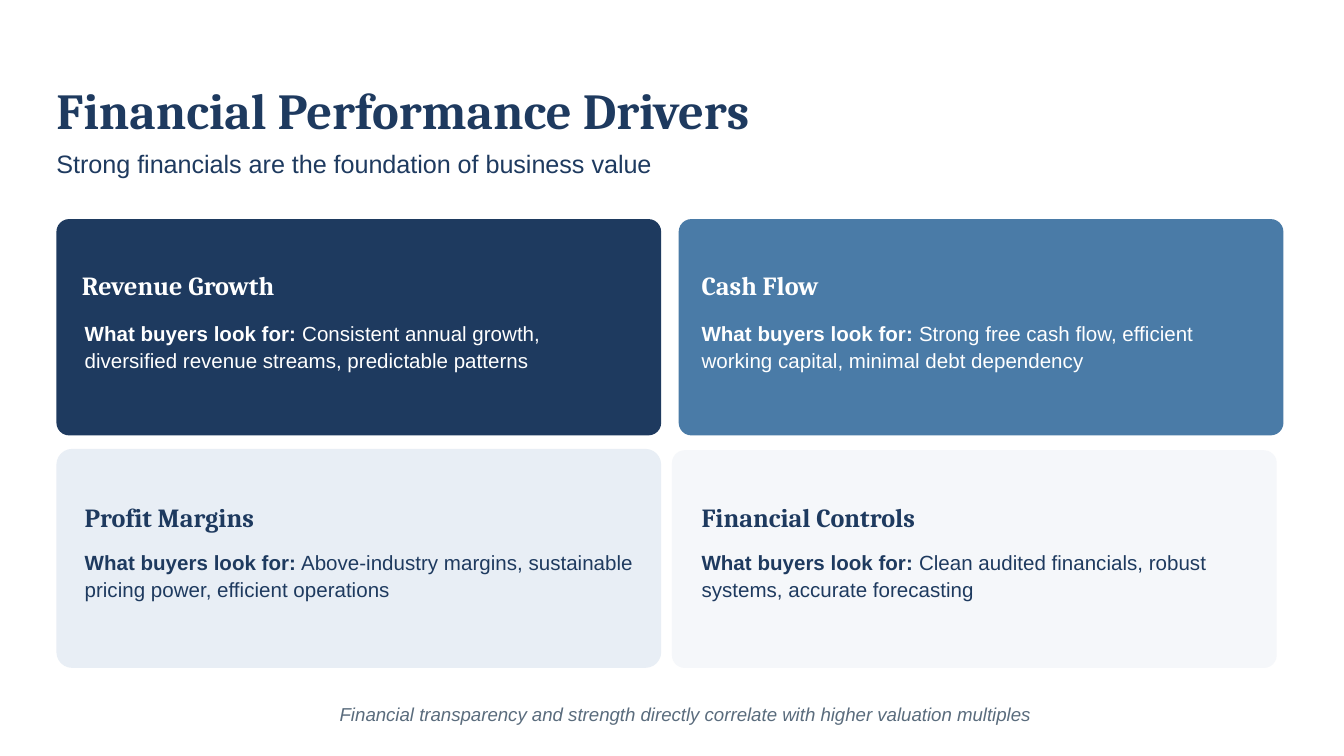
from dataclasses import dataclass

from pptx import Presentation
from pptx.dml.color import RGBColor
from pptx.enum.shapes import MSO_SHAPE
from pptx.enum.text import PP_ALIGN
from pptx.util import Inches, Pt


@dataclass(frozen=True)
class Theme:
    navy: str = "1E3A5F"
    blue: str = "4A7BA7"
    pale: str = "E8EEF5"
    mist: str = "F5F7FA"
    white: str = "FFFFFF"
    grey: str = "5A6C7D"
    heading_font: str = "Cambria"
    body_font: str = "Arial"
    title_size: float = 27
    subtitle_size: float = 13.5
    card_title_size: float = 14
    card_body_size: float = 11
    footer_size: float = 10


THEME = Theme()
LEFT, FULL_W = 0.42, 9.35
CARD_W = 4.5
LEAD = "What buyers look for:"

# Card box, corner, fill, text colour, text width, title left, body left, title, body
CARDS = [
    ((LEFT, 1.63, CARD_W, 1.61), 0.059, THEME.navy, THEME.white, 4.09, 0.61, 0.63,
     "Revenue Growth",
     "Consistent annual growth, diversified revenue streams, predictable patterns"),
    ((LEFT, 3.34, CARD_W, 1.63), 0.072, THEME.pale, THEME.navy, 4.09, 0.63, 0.63,
     "Profit Margins",
     "Above-industry margins, sustainable pricing power, efficient operations"),
    ((5.05, 1.63, CARD_W, 1.61), 0.059, THEME.blue, THEME.white, 4.13, 5.22, 5.22,
     "Cash Flow",
     "Strong free cash flow, efficient working capital, minimal debt dependency"),
    ((5, 3.35, CARD_W, 1.62), 0.059, THEME.mist, THEME.navy, 4.13, 5.22, 5.22,
     "Financial Controls",
     "Clean audited financials, robust systems, accurate forecasting"),
]
# Title and body tops for the upper and lower rows
ROW_TOPS = [(2.05, 2.37), (3.78, 4.07)]


def add_text(s, box, runs, font, size, color, spacing, after=0, italic=False,
             align=PP_ALIGN.LEFT):
    """Add a one-paragraph text box; runs are (text, bold) pairs."""
    tf = s.shapes.add_textbox(*map(Inches, box)).text_frame
    tf.word_wrap = True
    tf.margin_left = tf.margin_right = tf.margin_top = tf.margin_bottom = 0
    p = tf.paragraphs[0]
    p.alignment = align
    p.line_spacing = Pt(spacing)
    p.space_after = Pt(after)
    for text, bold in runs:
        r = p.add_run()
        r.text = text
        r.font.name = font
        r.font.size = Pt(size)
        r.font.bold = bold
        r.font.italic = italic
        r.font.color.rgb = RGBColor.from_string(color)


def add_panel(s, box, corner, fill):
    sp = s.shapes.add_shape(MSO_SHAPE.ROUNDED_RECTANGLE, *map(Inches, box))
    sp.adjustments[0] = corner
    sp.shadow.inherit = False
    sp.fill.solid()
    sp.fill.fore_color.rgb = RGBColor.from_string(fill)
    sp.line.fill.background()


def add_card(s, card, tops):
    box, corner, fill, color, width, title_x, body_x, title, body = card
    title_y, body_y = tops
    add_panel(s, box, corner, fill)
    add_text(s, (title_x, title_y, width, 0.19), [(title, True)],
             THEME.heading_font, THEME.card_title_size, color, 13.5, after=4.5)
    add_text(s, (body_x, body_y, width, 0.41), [(LEAD, True), (" " + body, False)],
             THEME.body_font, THEME.card_body_size, color, 14.6)


def main():
    # Widescreen 16:9 slide
    prs = Presentation()
    prs.slide_width = Inches(10)
    prs.slide_height = prs.slide_width * 9 // 16
    s = prs.slides.add_slide(prs.slide_layouts[6])
    s.background.fill.solid()
    s.background.fill.fore_color.rgb = RGBColor.from_string(THEME.white)

    # Heading
    add_text(s, (LEFT, 0.62, 6.88, 0.42), [("Financial Performance Drivers", True)],
             THEME.heading_font, THEME.title_size, THEME.navy, 30, after=6)
    add_text(s, (LEFT, 1.04, FULL_W, 0.29),
             [("Strong financials are the foundation of business value", False)],
             THEME.body_font, THEME.subtitle_size, THEME.navy, 21, after=9)

    # Driver cards, column by column
    for i, card in enumerate(CARDS):
        add_card(s, card, ROW_TOPS[i % 2])

    # Closing line
    add_text(s, (LEFT, 5.2, FULL_W, 0.19),
             [("Financial transparency and strength directly correlate "
               "with higher valuation multiples", False)],
             THEME.body_font, THEME.footer_size, THEME.grey, 14,
             italic=True, align=PP_ALIGN.CENTER)

    prs.save("out.pptx")


if __name__ == "__main__":
    main()
